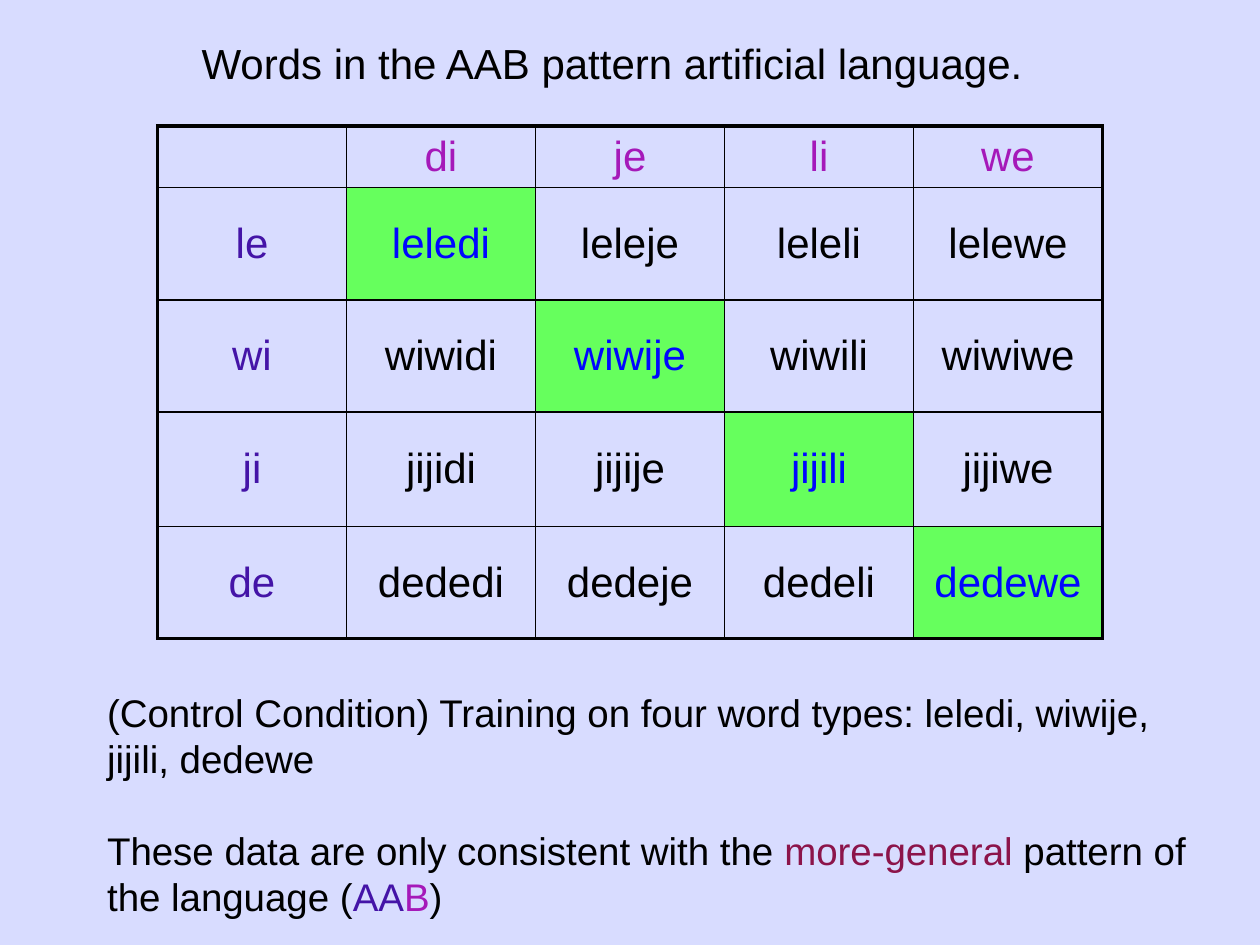
from lxml.etree import SubElement
from pptx import Presentation
from pptx.dml.color import RGBColor
from pptx.enum.text import MSO_ANCHOR, MSO_AUTO_SIZE, PP_ALIGN
from pptx.oxml.ns import qn
from pptx.util import Inches, Pt

BACKGROUND = RGBColor(0xD8, 0xDC, 0xFF)
BLACK = RGBColor(0, 0, 0)
SUFFIX = RGBColor(0xA5, 0x19, 0xB9)
STEM = RGBColor(0x44, 0x14, 0xA7)
TRAINED = RGBColor(0x00, 0x06, 0xFF)
TRAINED_FILL = RGBColor(0x66, 0xFF, 0x5D)
EMPHASIS = RGBColor(0x8C, 0x14, 0x4A)

GRID = Inches(0.25)  # the slide is 40 columns by 30 rows
STEMS = ["le", "wi", "ji", "de"]
SUFFIXES = ["di", "je", "li", "we"]
ROW_HEIGHTS = [1.96, 3.56, 3.56, 3.64, 3.56]
COLUMN_WIDTH = 6


def apply_format(target, values):
    for name, value in values.items():
        setattr(target, name, value)


def grid_lengths(*counts):
    return [round(count * GRID) for count in counts]


class SlideBuilder:
    """Holds the text style and the current slide."""

    font = "Arial"
    thin, thick = Pt(1), Pt(2.25)

    def __init__(self, presentation):
        self.slide = presentation.slides.add_slide(presentation.slide_layouts[1])
        fill = self.slide.background.fill
        fill.solid()
        fill.fore_color.rgb = BACKGROUND

    def add_runs(self, paragraph, runs, size, align=PP_ALIGN.LEFT, before=0):
        """Fill a paragraph with (text, colour) runs."""
        apply_format(paragraph, {"alignment": align, "line_spacing": 1.0,
                                 "space_before": Pt(before), "space_after": Pt(0)})
        for text, color in runs:
            run = paragraph.add_run()
            run.text = text
            apply_format(run.font, {"name": self.font, "size": Pt(size), "bold": False})
            run.font.color.rgb = color

    def placeholder(self, index, area, paragraphs, size, gap=0):
        shape = self.slide.placeholders[index]
        apply_format(shape, dict(zip(("left", "top", "width", "height"),
                                     grid_lengths(*area))))
        frame = shape.text_frame
        apply_format(frame, {"word_wrap": True, "auto_size": MSO_AUTO_SIZE.NONE,
                             "vertical_anchor": MSO_ANCHOR.TOP})
        for number, runs in enumerate(paragraphs):
            paragraph = frame.add_paragraph() if number else frame.paragraphs[0]
            self.add_runs(paragraph, runs, size, before=gap if number else 0)
            properties = paragraph._p.get_or_add_pPr()
            properties.set("marL", "0")
            properties.set("indent", "0")
            SubElement(properties, qn("a:buNone"))

    def border(self, cell, widths):
        properties = cell._tc.get_or_add_tcPr()
        for position, (side, width) in enumerate(widths.items()):
            line = SubElement(properties, qn(f"a:ln{side}"), w=str(width))
            fill = SubElement(line, qn("a:solidFill"))
            SubElement(fill, qn("a:srgbClr"), val=str(BLACK))
            properties.insert(position, line)  # borders come before the fill

    def table(self, left, top, rows, column_width, row_heights, size):
        """Draw rows of (text, colour, fill) cells."""
        last_row, last_column = len(rows) - 1, len(rows[0]) - 1
        area = grid_lengths(left, top, column_width * len(rows[0]), sum(row_heights))
        table = self.slide.shapes.add_table(len(rows), len(rows[0]), *area).table
        apply_format(table, {"first_row": False, "horz_banding": False})
        for column in table.columns:
            column.width = round(column_width * GRID)
        for row, height in zip(table.rows, row_heights):
            row.height = round(height * GRID)
        for r, row in enumerate(rows):
            for c, (text, color, fill) in enumerate(row):
                cell = table.cell(r, c)
                cell.vertical_anchor = MSO_ANCHOR.MIDDLE
                if fill is None:
                    cell.fill.background()
                else:
                    cell.fill.solid()
                    cell.fill.fore_color.rgb = fill
                if text:
                    self.add_runs(cell.text_frame.paragraphs[0], [(text, color)],
                                  size, PP_ALIGN.CENTER)
                outer = {"L": c == 0, "R": c == last_column,
                         "T": r == 0, "B": r == last_row}
                self.border(cell, {side: self.thick if edge else self.thin
                                   for side, edge in outer.items()})


def word_rows():
    """Each word is its stem twice and a suffix; the diagonal is trained."""
    rows = [[("", BLACK, None)] + [(suffix, SUFFIX, None) for suffix in SUFFIXES]]
    for r, stem in enumerate(STEMS):
        row = [(stem, STEM, None)]
        for c, suffix in enumerate(SUFFIXES):
            style = (TRAINED, TRAINED_FILL) if r == c else (BLACK, None)
            row.append((stem * 2 + suffix, *style))
        rows.append(row)
    return rows


def main():
    presentation = Presentation()
    apply_format(presentation, {"slide_width": 40 * GRID, "slide_height": 30 * GRID})
    builder = SlideBuilder(presentation)
    builder.table(5, 4, word_rows(), COLUMN_WIDTH, ROW_HEIGHTS, size=24)
    builder.placeholder(0, (6, 1, 27.68, 2), [
        [("Words in the AAB pattern artificial language.", BLACK)],
    ], size=24)
    builder.placeholder(1, (3, 21.68, 35.68, 7.72), [
        [("(Control Condition) Training on four word types: "
          "leledi, wiwije, jijili, dedewe", BLACK)],
        [("These data are only consistent with the ", BLACK),
         ("more-general", EMPHASIS),
         (" pattern of the language (", BLACK),
         ("AA", STEM), ("B", SUFFIX), (")", BLACK)],
    ], size=22, gap=26)
    presentation.save("out.pptx")


if __name__ == "__main__":
    main()
